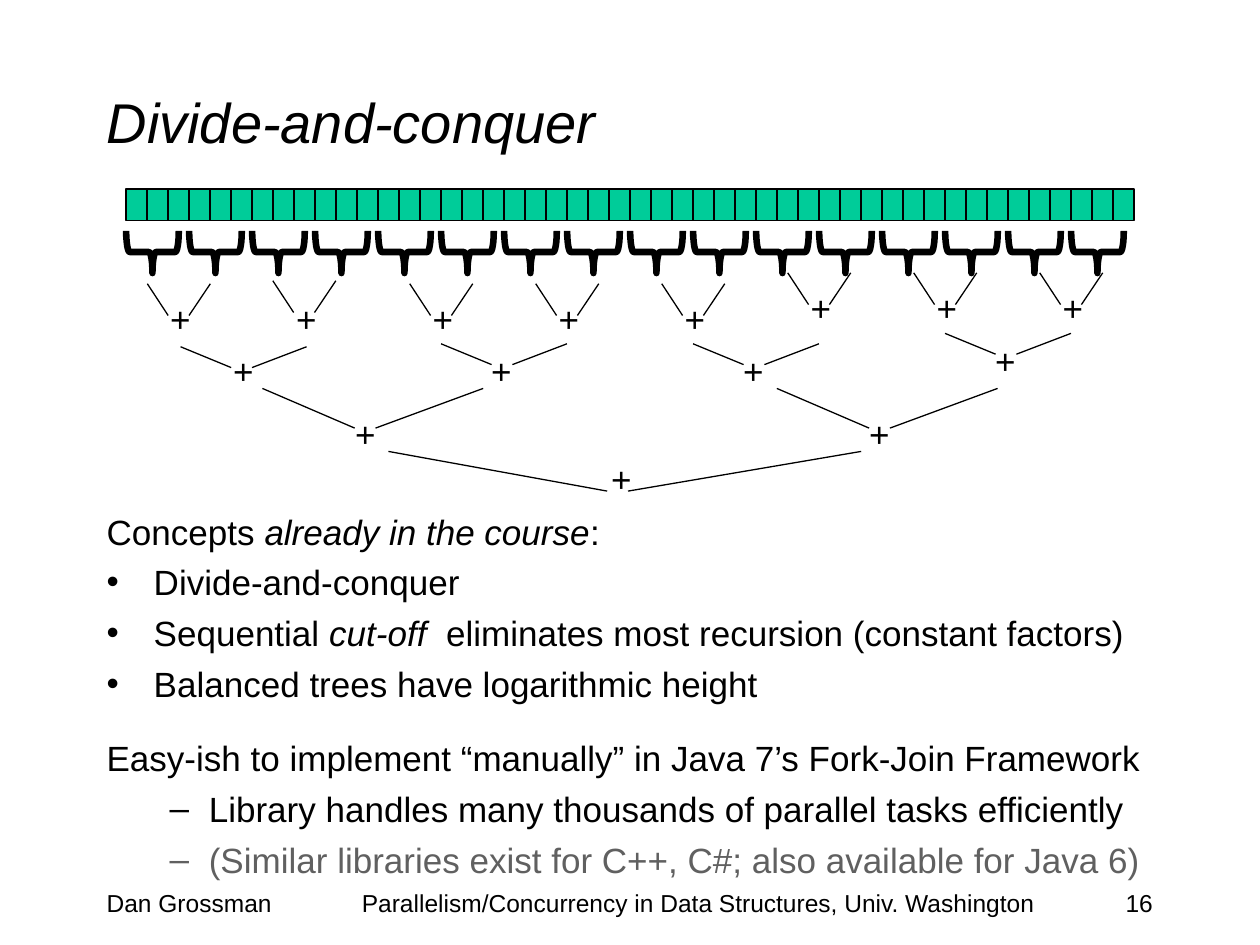
"""Build the divide-and-conquer slide with its parallel summation tree."""
import dataclasses

import lxml.etree
import pptx
import pptx.dml.color
import pptx.enum.shapes
import pptx.enum.text
import pptx.oxml.ns
import pptx.util

Cm = pptx.util.Cm
Pt = pptx.util.Pt
Align = pptx.enum.text.PP_ALIGN
Anchor = pptx.enum.text.MSO_ANCHOR
Preset = pptx.enum.shapes.MSO_SHAPE
qn = pptx.oxml.ns.qn


@dataclasses.dataclass(frozen=True)
class Theme:
    font: str = "Arial"
    ink: str = "000000"
    muted: str = "606060"
    cell: str = "00CC99"
    title_size: float = 32
    body_size: float = 20
    footer_size: float = 14
    thin: float = 0.75
    thick: float = 3.75
    paragraph_gap: float = 5
    section_gap: float = 18.5


@dataclasses.dataclass(frozen=True)
class Level:
    spread: float
    reach: float
    drop: float
    nodes: tuple


def rgb(value):
    return pptx.dml.color.RGBColor.from_string(value)


def write(paragraph, text, *, font, size, color, italic=False):
    run = paragraph.add_run()
    run.text = text
    run.font.name = font
    run.font.size = Pt(size)
    run.font.color.rgb = rgb(color)
    run.font.italic = italic


class SlideBuilder:
    def __init__(self, slide, theme):
        self.slide = slide
        self.theme = theme

    def frame(self, left, top, width, height, wrap=True, anchor=Anchor.TOP):
        box = self.slide.shapes.add_textbox(Cm(left), Cm(top), Cm(width), Cm(height))
        box.text_frame.word_wrap = wrap
        box.text_frame.vertical_anchor = anchor
        return box.text_frame

    def label(self, text, place, size, align=Align.LEFT, italic=False, **layout):
        paragraph = self.frame(*place, **layout).paragraphs[0]
        paragraph.alignment = align
        write(paragraph, text, font=self.theme.font, size=size,
              color=self.theme.ink, italic=italic)

    def shape(self, preset, left, top, width, height, weight, fill=None, rotation=0):
        shape = self.slide.shapes.add_shape(
            preset, Cm(left), Cm(top), Cm(width), Cm(height))
        shape.shadow.inherit = False
        shape.rotation = rotation
        shape.line.color.rgb = rgb(self.theme.ink)
        shape.line.width = Pt(weight)
        if fill:
            shape.fill.solid()
            shape.fill.fore_color.rgb = rgb(fill)
        else:
            shape.fill.background()

    def line(self, x1, y1, x2, y2):
        line = self.slide.shapes.add_connector(
            pptx.enum.shapes.MSO_CONNECTOR.STRAIGHT, Cm(x1), Cm(y1), Cm(x2), Cm(y2))
        line.line.color.rgb = rgb(self.theme.ink)
        line.line.width = Pt(self.theme.thin)
        properties = line._element.spPr
        lxml.etree.SubElement(properties, qn("a:effectLst"))

    def bullet(self, paragraph, mark, margin, hanging):
        properties = paragraph._p.get_or_add_pPr()
        properties.set("marL", str(Cm(margin)))
        properties.set("indent", str(-Cm(hanging)))
        font = lxml.etree.SubElement(properties, qn("a:buFont"))
        font.set("typeface", self.theme.font)
        lxml.etree.SubElement(properties, qn("a:buChar")).set("char", mark)

    def body(self, place, entries):
        frame = self.frame(*place)
        for index, (parts, bullet, gap, color) in enumerate(entries):
            paragraph = frame.add_paragraph() if index else frame.paragraphs[0]
            paragraph.space_before = Pt(gap)
            if bullet:
                paragraph.level = 1 if bullet[0] == "–" else 0
                self.bullet(paragraph, *bullet)
            for part, text in enumerate(parts):
                write(paragraph, text, font=self.theme.font, size=self.theme.body_size,
                      color=color, italic=part % 2 == 1)

    def sum_node(self, level, x, y, plus_left, plus_top):
        foot = y + level.drop
        joint = x + level.reach
        self.line(x, y, joint, foot)
        self.line(x + level.spread, y, joint + 0.42, foot)
        self.label("+", (plus_left, plus_top, 0.91, 1.11), self.theme.body_size, wrap=False)


LEVELS = (
    Level(1.27, 0.42, 0.64, (
        (2.97, 5.72, 3.18, 5.87), (5.5, 5.66, 5.72, 5.87),
        (8.26, 5.72, 8.47, 5.87), (10.8, 5.72, 11.01, 5.87),
        (13.34, 5.72, 13.55, 5.87), (15.88, 5.5, 16.09, 5.66),
        (18.42, 5.5, 18.63, 5.66), (20.96, 5.5, 21.17, 5.66))),
    Level(2.54, 1.02, 0.42, (
        (3.64, 6.99, 4.45, 6.93), (8.89, 6.93, 9.65, 6.93),
        (13.97, 6.93, 14.73, 6.93), (19.05, 6.72, 19.81, 6.72))),
    Level(4.45, 1.86, 0.8, (
        (5.29, 7.83, 6.91, 8.2), (15.66, 7.83, 17.27, 8.2))),
    Level(9.53, 4.41, 0.8, ((7.83, 9.1, 12.07, 9.1),)),
)


def main():
    theme = Theme()
    deck = pptx.Presentation()
    deck.slide_width, deck.slide_height = Cm(25.4), Cm(19.05)
    builder = SlideBuilder(deck.slides.add_slide(deck.slide_layouts[6]), theme)

    builder.label("Divide-and-conquer", (1.9, 0.85, 21.59, 3.18), theme.title_size,
                  italic=True, anchor=Anchor.MIDDLE)
    for text, left, width, align in (
        ("Dan Grossman", 1.9, 5.29, Align.LEFT),
        ("16", 18.2, 5.29, Align.RIGHT),
        ("Parallelism/Concurrency in Data Structures, Univ. Washington",
         6.99, 14.18, Align.CENTER),
    ):
        builder.label(text, (left, 17.78, width, 1.27), theme.footer_size, align)

    cell_count, array_left, array_width = 48, 2.54, 20.32
    cell_width = array_width / cell_count
    for cell in range(cell_count):
        builder.shape(Preset.RECTANGLE, array_left + cell * cell_width, 3.81,
                      cell_width, 0.64, theme.thin, fill=theme.cell)
    for chunk in range(16):
        builder.shape(Preset.LEFT_BRACE, 2.65 + 1.27 * chunk, 4.55, 0.85, 1.06,
                      theme.thick, rotation=270)
    for level in LEVELS:
        for node in level.nodes:
            builder.sum_node(level, *node)

    dot, dash = ("•", 0.95, 0.95), ("–", 2.06, 0.79)
    gap, ink = theme.paragraph_gap, theme.ink
    builder.body((1.9, 10.16, 21.59, 7.83), (
        (("Concepts ", "already in the course", ":"), None, 0, ink),
        (("Divide-and-conquer",), dot, gap, ink),
        (("Sequential", " cut-off ", " eliminates most recursion (constant factors)"),
         dot, gap, ink),
        (("Balanced trees have logarithmic height",), dot, gap, ink),
        (("Easy-ish to implement “manually” in Java 7’s Fork-Join Framework",),
         None, theme.section_gap, ink),
        (("Library handles many thousands of parallel tasks efficiently",), dash, gap, ink),
        (("(Similar libraries exist for C++, C#; also available for Java 6)",),
         dash, gap, theme.muted),
    ))
    deck.save("out.pptx")


if __name__ == "__main__":
    main()
